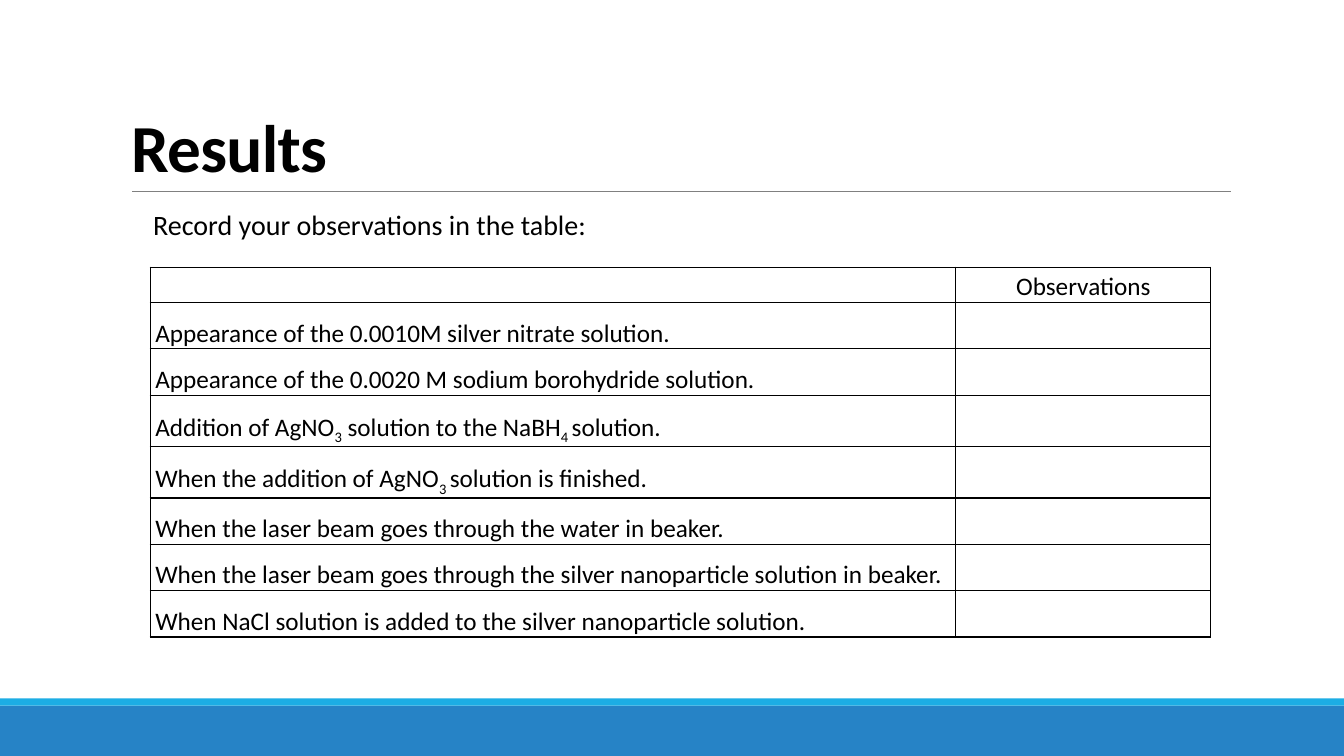
from dataclasses import dataclass

from lxml.etree import SubElement
from pptx import Presentation
from pptx.dml.color import RGBColor
from pptx.enum.shapes import MSO_CONNECTOR as Connector, MSO_SHAPE as Shape
from pptx.enum.text import MSO_ANCHOR as Anchor, MSO_AUTO_SIZE as AutoSize, PP_ALIGN as Align
from pptx.oxml import parse_xml
from pptx.oxml.ns import nsdecls, qn
from pptx.util import Inches, Pt


@dataclass(frozen=True)
class Theme:
    font: str = "Calibri"
    ink: str = "000000"
    rule: str = "808080"
    band: str = "2683C6"
    accent: str = "1CADE4"
    title_size: int = 48
    prompt_size: int = 20
    table_size: int = 18


# Text between bars is subscript.
OBSERVATION_STEPS = [
    "Appearance of the 0.0010M silver nitrate solution.",
    "Appearance of the 0.0020 M sodium borohydride solution.",
    "Addition of AgNO|3| solution to the NaBH|4 |solution.",
    "When the addition of AgNO|3 |solution is finished.",
    "When the laser beam goes through the water in beaker.",
    "When the laser beam goes through the silver nanoparticle solution in beaker.",
    "When NaCl solution is added to the silver nanoparticle solution.",
]
HEADER_HEIGHT, STEP_HEIGHT, SUBSCRIPT_STEP_HEIGHT = 0.35, 0.46, 0.51


class SlideBuilder:
    def __init__(self, slide, theme):
        self.slide = slide
        self.theme = theme

    def style(self, paragraph, size, bold=False):
        font = paragraph.font
        font.name, font.size, font.bold = self.theme.font, Pt(size), bold
        font.color.rgb = RGBColor.from_string(self.theme.ink)

    def bar(self, left, top, width, height, color):
        bar = self.slide.shapes.add_shape(
            Shape.RECTANGLE, Inches(left), Inches(top), Inches(width), Inches(height))
        bar.shadow.inherit = False
        bar.fill.solid()
        bar.fill.fore_color.rgb = RGBColor.from_string(color)
        bar.line.fill.background()

    def rule(self, left, right, y):
        rule = self.slide.shapes.add_connector(
            Connector.STRAIGHT, Inches(left), Inches(y), Inches(right), Inches(y))
        rule.line.color.rgb = RGBColor.from_string(self.theme.rule)
        rule.line.width = Pt(0.5)
        SubElement(rule._element.spPr, qn("a:effectLst"))

    def title(self, text, left, top, width, height):
        title = self.slide.shapes.title
        title.left, title.top = Inches(left), Inches(top)
        title.width, title.height = Inches(width), Inches(height)
        frame = title.text_frame
        frame.text = text
        frame.auto_size = AutoSize.NONE
        frame.vertical_anchor = Anchor.BOTTOM
        heading = frame.paragraphs[0]
        heading.alignment = Align.LEFT
        heading.line_spacing = 0.85
        self.style(heading, self.theme.title_size, bold=True)
        heading.runs[0].font._element.set("spc", "-50")

    def prompt(self, text, left, top, width, height):
        box = self.slide.shapes.add_textbox(
            Inches(left), Inches(top), Inches(width), Inches(height))
        frame = box.text_frame
        frame.word_wrap = True
        frame.auto_size = AutoSize.SHAPE_TO_FIT_TEXT
        frame.text = text
        self.style(frame.paragraphs[0], self.theme.prompt_size)

    def cell(self, cell, text, line_spacing=1.0, alignment=Align.LEFT):
        cell.margin_left = cell.margin_right = Inches(0.05)
        cell.margin_top = cell.margin_bottom = 0
        cell.vertical_anchor = Anchor.MIDDLE
        cell.fill.background()
        self.border(cell)
        paragraph = cell.text_frame.paragraphs[0]
        paragraph.alignment = alignment
        paragraph.line_spacing = line_spacing
        self.style(paragraph, self.theme.table_size)
        for position, part in enumerate(text.split("|") if text else []):
            run = paragraph.add_run()
            run.text = part
            if position % 2:
                run.font._element.set("baseline", "-25000")

    def border(self, cell):
        properties = cell._tc.get_or_add_tcPr()
        for index, side in enumerate("LRTB"):
            properties.insert(index, parse_xml(
                f'<a:ln{side} {nsdecls("a")} w="{Pt(1)}"><a:solidFill>'
                f'<a:srgbClr val="{self.theme.ink}"/></a:solidFill></a:ln{side}>'))

    def observation_table(self, steps, left, top, column_widths):
        heights = [HEADER_HEIGHT] + [
            SUBSCRIPT_STEP_HEIGHT if "|" in step else STEP_HEIGHT for step in steps]
        table = self.slide.shapes.add_table(
            len(heights), len(column_widths), Inches(left), Inches(top),
            Inches(sum(column_widths)), Inches(sum(heights))).table
        table.first_row = table.horz_banding = False
        for column, width in zip(table.columns, column_widths):
            column.width = Inches(width)
        for row, height in zip(table.rows, heights):
            row.height = Inches(height)
        self.cell(table.cell(0, 0), "")
        self.cell(table.cell(0, 1), "Observations", 1.15, Align.CENTER)
        for row, step in enumerate(steps, start=1):
            self.cell(table.cell(row, 0), step, 1.5)
            self.cell(table.cell(row, 1), "")


def main():
    presentation = Presentation()
    presentation.slide_width, presentation.slide_height = Inches(13.33), Inches(7.5)
    theme = Theme()
    results = SlideBuilder(
        presentation.slides.add_slide(presentation.slide_layouts[5]), theme)
    results.bar(0, 7, 13.33, 0.5, theme.band)
    results.bar(0, 6.93, 13.33, 0.07, theme.accent)
    results.rule(1.31, 12.21, 1.9)
    results.title("Results", 1.2, 0.31, 11, 1.59)
    results.observation_table(OBSERVATION_STEPS, 1.49, 2.65, [7.99, 2.53])
    results.prompt("Record your observations in the table:", 1.42, 2.01, 4.78, 0.44)
    presentation.save("out.pptx")


if __name__ == "__main__":
    main()
